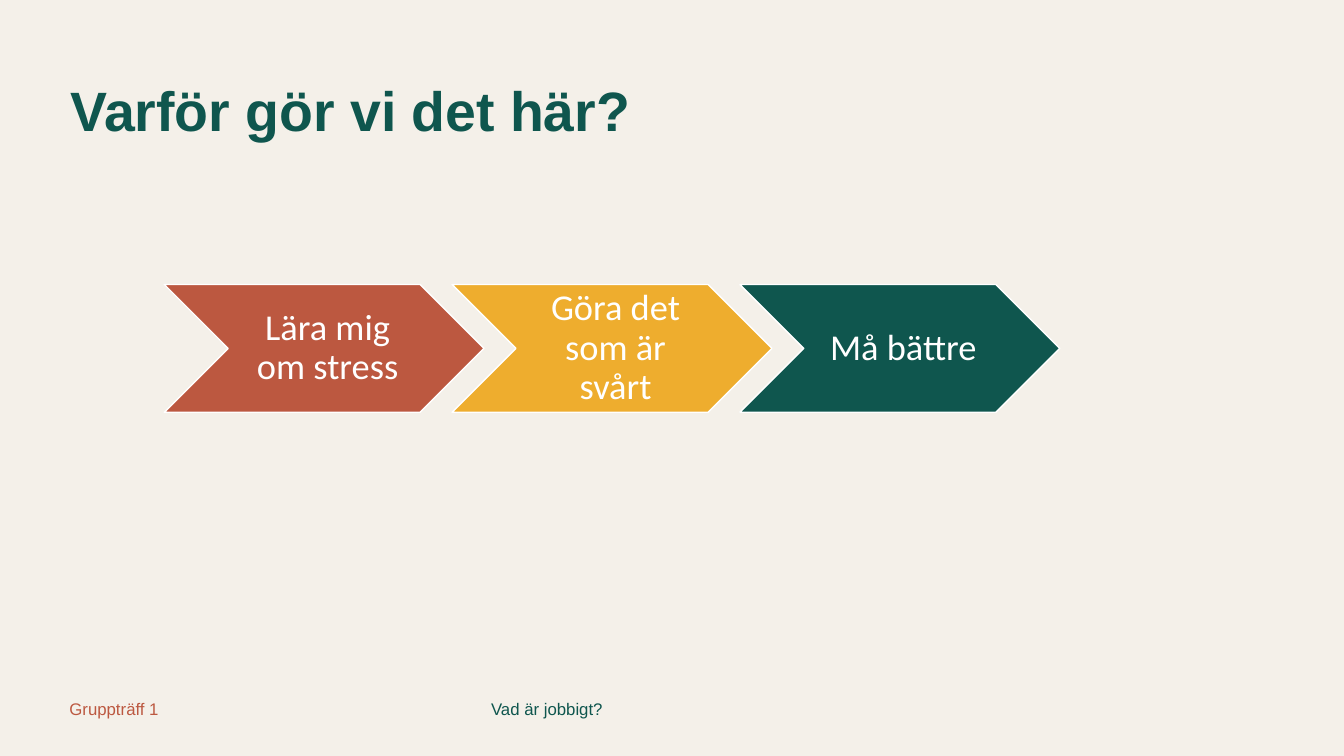
from dataclasses import dataclass

from pptx import Presentation
from pptx import util as u
from pptx.dml.color import RGBColor
from pptx.enum import shapes, text
from pptx.text.text import TextFrame


@dataclass(frozen=True)
class Theme:
    cream: str = "F4F0E9"
    green: str = "0F564E"
    rust: str = "BC5840"
    amber: str = "EEAD2E"
    white: str = "FFFFFF"
    heading_font: str = "Arial"
    step_font: str = "Calibri"
    title_size: float = 39.6
    step_size: float = 26
    footer_size: float = 12
    line_spacing: float = 0.9


@dataclass(frozen=True)
class Label:
    wording: str
    left: float
    top: float
    width: float
    height: float
    size: float
    color: str
    bold: bool = False
    align: text.PP_ALIGN = text.PP_ALIGN.LEFT


@dataclass(frozen=True)
class Step:
    wording: str
    color: str


THEME = Theme()

LABELS = [
    Label("Varför gör vi det här?", 1.52, 1.98, 19.76, 1.93,
          THEME.title_size, THEME.green, bold=True),
    Label("Vad är jobbigt?", 9.47, 17.55, 5.97, 0.79,
          THEME.footer_size, THEME.green, align=text.PP_ALIGN.RIGHT),
    Label("Gruppträff 1", 1.5, 17.55, 6.96, 0.79,
          THEME.footer_size, THEME.rust),
]

STEPS = [
    Step("Lära mig om stress", THEME.rust),
    Step("Göra det som är svårt", THEME.amber),
    Step("Må bättre", THEME.green),
]

# Chevron row in centimetres; neighbours overlap by a tenth of their width
ROW_LEFT, ROW_TOP = 4.14, 7.17
STEP_WIDTH, STEP_HEIGHT = 8.06, 3.22
STEP_PITCH = 0.9 * STEP_WIDTH


def rgb(color: str) -> RGBColor:
    return RGBColor.from_string(color)


def write(frame: TextFrame, wording: str, font: str, size: float, color: str,
          align: text.PP_ALIGN, bold: bool = False) -> None:
    frame.word_wrap = True
    para = frame.paragraphs[0]
    para.text = wording
    para.alignment = align
    para.line_spacing = THEME.line_spacing
    para.font.name = font
    para.font.size = u.Pt(size)
    para.font.bold = bold
    para.font.color.rgb = rgb(color)


def add_label(page, label: Label) -> None:
    box = page.shapes.add_textbox(u.Cm(label.left), u.Cm(label.top),
                                  u.Cm(label.width), u.Cm(label.height))
    write(box.text_frame, label.wording, THEME.heading_font, label.size,
          label.color, label.align, label.bold)


def add_step(page, step: Step, index: int) -> None:
    chevron = page.shapes.add_shape(
        shapes.MSO_SHAPE.CHEVRON,
        u.Cm(ROW_LEFT + index * STEP_PITCH), u.Cm(ROW_TOP),
        u.Cm(STEP_WIDTH), u.Cm(STEP_HEIGHT))
    chevron.shadow.inherit = False
    chevron.fill.solid()
    chevron.fill.fore_color.rgb = rgb(step.color)
    chevron.line.color.rgb = rgb(THEME.white)
    chevron.line.width = u.Pt(1)

    frame = chevron.text_frame
    frame.vertical_anchor = text.MSO_ANCHOR.MIDDLE
    frame.margin_left = u.Cm(0.28)
    frame.margin_top = frame.margin_right = frame.margin_bottom = u.Cm(0.1)
    write(frame, step.wording, THEME.step_font, THEME.step_size,
          THEME.white, text.PP_ALIGN.CENTER)


def main() -> None:
    deck = Presentation()
    deck.slide_width, deck.slide_height = u.Cm(33.87), u.Cm(19.05)
    page = deck.slides.add_slide(deck.slide_layouts[6])

    # Background
    page.background.fill.solid()
    page.background.fill.fore_color.rgb = rgb(THEME.cream)

    # Title and footers
    for label in LABELS:
        add_label(page, label)

    # Chevron process
    for index, step in enumerate(STEPS):
        add_step(page, step, index)

    deck.save("out.pptx")


if __name__ == "__main__":
    main()
